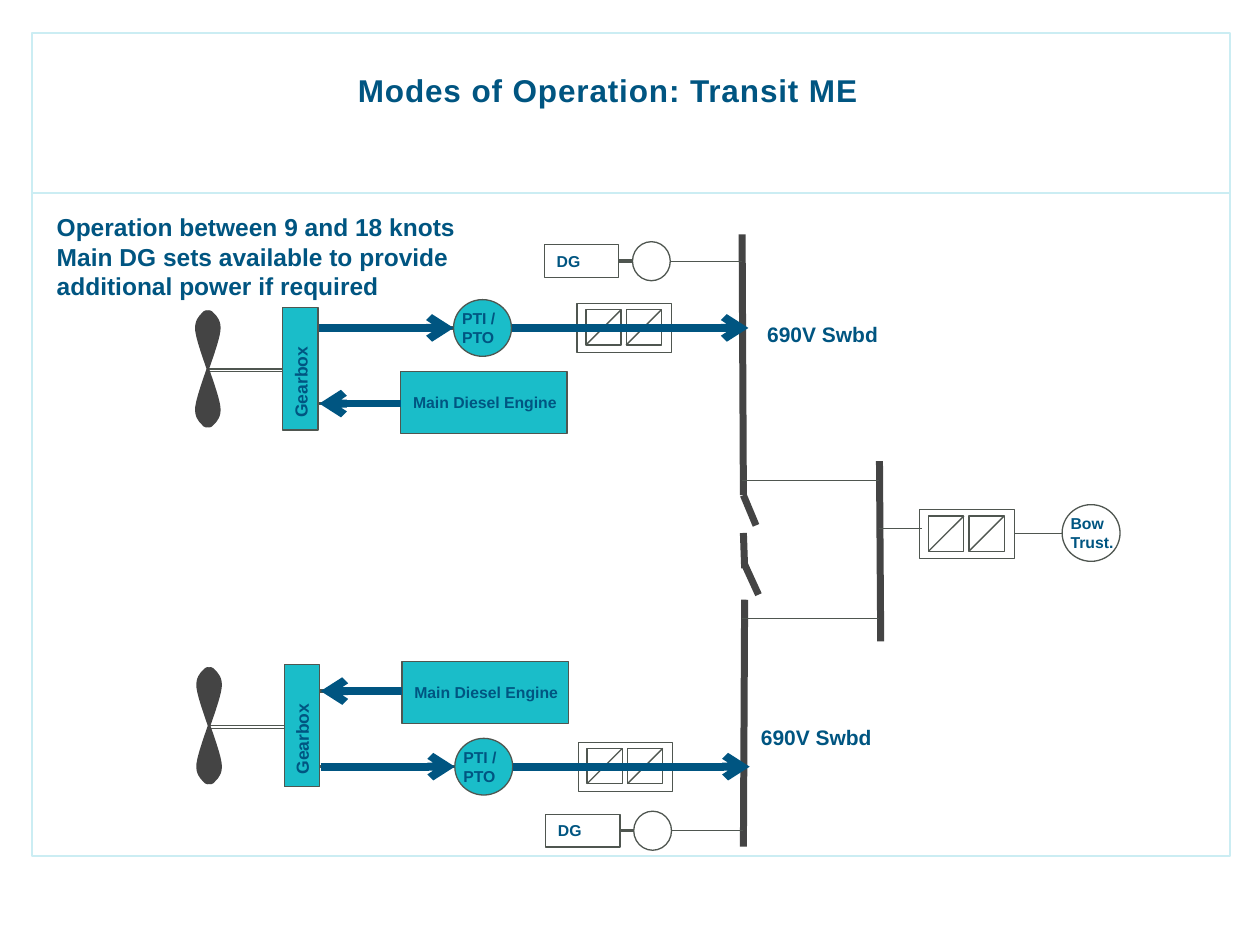
from itertools import product
from lxml.etree import SubElement
from pptx import Presentation
from pptx.dml.color import RGBColor
from pptx.enum.shapes import MSO_CONNECTOR, MSO_SHAPE
from pptx.enum.text import MSO_ANCHOR, MSO_AUTO_SIZE, PP_ALIGN
from pptx.oxml.ns import qn
from pptx.util import Inches, Pt

NAVY, TEAL, WHITE = "005581", "1ABDC9", "FFFFFF"
GREY, DARK, PALE = "4F5650", "444444", "CBEDF3"
RECT, OVAL = MSO_SHAPE.RECTANGLE, MSO_SHAPE.OVAL
BLADE = [
    (0.2, -4.6), (0, -4.7), (-0.3, -4.7), (-0.5, -4.4), (-0.7, -4.2),
    (-1.1, -3.8), (-1, -3), (-0.9, -2.2), (-0.2, -0.3), (0, 0.3),
    (0.2, 0.9), (0.1, 0.6), (0, 0.3),
]


def color(code):
    """Turn a hex string into a colour."""
    return RGBColor.from_string(code)


def cell(count):
    """Turn a count of grid cells (100 columns by 75 rows) into a length."""
    return Inches(count / 10)


def write(shape, text, size, align=PP_ALIGN.LEFT, anchor=MSO_ANCHOR.MIDDLE,
          wrap=False, pad=(0.1, 0.05), turn=None, track=None):
    """Fill a shape with bold text, one paragraph a line."""
    frame = shape.text_frame
    frame.auto_size = MSO_AUTO_SIZE.NONE
    frame.word_wrap = wrap
    frame.vertical_anchor = anchor
    frame.margin_left, frame.margin_right = Inches(pad[0]), Inches(0.1)
    frame.margin_top = frame.margin_bottom = Inches(pad[1])
    frame.text = text
    if turn:
        frame._txBody.bodyPr.set("vert", turn)
    for para in frame.paragraphs:
        para.alignment = align
        para.line_spacing = 1.0
        para.space_before = para.space_after = Pt(0)
        for run in para.runs:
            font = run.font
            font.name, font.size, font.bold = "Arial", Pt(size), True
            font.color.rgb = color(NAVY)
            if track:
                run._r.get_or_add_rPr().set("spc", str(track))


def block(slide, kind, x, y, wide, high, fill=None, edge=GREY, width=0.75):
    """Add a preset shape at a grid place."""
    shape = slide.shapes.add_shape(kind, *map(cell, (x, y, wide, high)))
    shape.shadow.inherit = False
    if fill:
        shape.fill.solid()
        shape.fill.fore_color.rgb = color(fill)
    else:
        shape.fill.background()
    shape.line.color.rgb = color(edge)
    shape.line.width = Pt(width)
    return shape


def wire(slide, x, y, to_x, to_y, tone=GREY, width=0.75, arrow=False):
    """Add a straight line, with an arrowhead at its end if asked."""
    line = slide.shapes.add_connector(
        MSO_CONNECTOR.STRAIGHT, *map(cell, (x, y, to_x, to_y)))
    line.line.color.rgb = color(tone)
    line.line.width = Pt(width)
    props = line._element.spPr
    if arrow:
        SubElement(props.find(qn("a:ln")), qn("a:tailEnd"), type="arrow")
    SubElement(props, qn("a:effectLst"))


def flow(slide, x, to_x, y):
    """Add a level power arrow."""
    wire(slide, x, y, to_x, y, NAVY, 4.5, True)


def label(slide, text, x, y):
    """Add a switchboard label."""
    box = slide.shapes.add_textbox(*map(cell, (x, y, 10.9, 3)))
    write(box, text, 12, anchor=MSO_ANCHOR.TOP)


def bend(shape):
    """Turn each three straight segments of an outline into a cubic curve."""
    steps = list(shape._element.iter(qn("a:lnTo")))
    path = steps[0].getparent()
    for start in range(0, len(steps), 3):
        arc = SubElement(path, qn("a:cubicBezTo"))
        for step in steps[start:start + 3]:
            arc.append(step[0])
            path.remove(step)


def screw(slide, x, y):
    """Draw a propeller of four half blades around its hub."""
    group = slide.shapes.add_group_shape()
    for down, side in product((1, -1), (1, -1)):
        dots = [(cell(x + side * a), cell(y + down * b)) for a, b in BLADE[:10]]
        build = group.shapes.build_freeform(*dots[0])
        build.add_line_segments(dots[1:], close=False)
        shape = build.convert_to_shape()
        bend(shape)
        shape.shadow.inherit = False
        shape.fill.solid()
        shape.fill.fore_color.rgb = color(DARK)
        shape.line.fill.background()


def drive(slide, x, y):
    """Draw a converter: two crossed squares in a frame."""
    for left in (x + 0.7, x + 3.9):
        block(slide, RECT, left, y + 0.5, 2.8, 2.8, WHITE)
        wire(slide, left + 2.8, y + 0.5, left, y + 3.3)
    block(slide, RECT, x, y, 7.5, 3.9)


def disc(slide, text, x, y, fill):
    """Draw a round machine with its name."""
    shape = block(slide, OVAL, x, y, 4.6, 4.5, fill)
    write(shape, text, 9, pad=(0, 0.05))


def genset(slide, x, y):
    """Draw a diesel generator wired to the bus."""
    write(block(slide, RECT, x, y, 5.9, 2.6, WHITE), "DG", 9)
    mid = y + 1.3
    block(slide, OVAL, x + 7, y - 0.25, 3, 3.1, WHITE)
    wire(slide, x + 7, mid, x + 5.9, mid, width=2)
    wire(slide, x + 10, mid, x + 15.7, mid)


def train(slide, x, y, side):
    """Draw a drive train around its shaft; side 1 puts the engine below."""
    main, power = y + side * 2.75, y - side * 3.25
    for gap in (0, 0.2):
        wire(slide, x + 5.9, y + gap, x, y + gap)
    screw(slide, x, y)
    wire(slide, x + 19.5, power, x + 8.1, power, width=2)
    wire(slide, x + 15.3, main, x + 8.6, main, width=2)
    gear = block(slide, RECT, x + 5.95, y - 4.85, 2.8, 9.7, TEAL)
    write(gear, "Gearbox", 10, turn="vert270")
    engine = block(slide, RECT, x + 15.3, y + side * 2.65 - 2.45, 13.2, 4.9, TEAL)
    write(engine, "Main Diesel Engine", 9)
    disc(slide, "PTI /\nPTO", x + 19.5, power - 2.25, TEAL)
    drive(slide, x + 29.3, power - 1.95)
    flow(slide, x + 24.1, x + 42.9, power)
    flow(slide, x + 8.85, x + 19.5, power)
    flow(slide, x + 15.3, x + 8.85, main)


def board(slide, x, y):
    """Draw the bus bars, bus ties and feeders."""
    bars = [
        (0, 0, 0.1, 20.7), (0.1, 20.7, 1.1, 23.1),
        (0.1, 23.7, 0.2, 26.5), (0.2, 26.2, 1.3, 28.6),
        (0.2, 29, 0.1, 48.6), (10.9, 18, 11, 32.3),
    ]
    for a, b, c, d in bars:
        wire(slide, x + a, y + b, x + c, y + d, DARK, 4)
    for drop in (19.55, 30.5):
        wire(slide, x, y + drop, x + 10.9, y + drop)


def bow(slide, x, y):
    """Draw the bow thruster with its converter."""
    drive(slide, x + 3.2, y)
    wire(slide, x, y + 1.5, x + 3.4, y + 1.5)
    wire(slide, x + 10.7, y + 1.9, x + 14.5, y + 1.9)
    disc(slide, "Bow\nTrust.", x + 14.5, y - 0.4, WHITE)


def header(slide):
    """Draw the page frame and fill the title and body."""
    block(slide, RECT, 2.54, 2.6, 95.06, 65.35, edge=PALE, width=1)
    wire(slide, 2.54, 15.3, 97.6, 15.3, PALE, 1)
    title, body = slide.placeholders
    spots = ((title, (0.4, 5.1, 95.7, 4)), (body, (3.5, 16.35, 39.7, 8.1)))
    for shape, spot in spots:
        shape.left, shape.top, shape.width, shape.height = map(cell, spot)
    write(title, "Modes of Operation: Transit ME", 18, PP_ALIGN.CENTER,
          MSO_ANCHOR.TOP, True, track=50)
    write(body, "Operation between 9 and 18 knots\nMain DG sets available to "
          "provide additional power if required", 14, anchor=MSO_ANCHOR.TOP, wrap=True)
    for para in body.text_frame.paragraphs:
        props = para._p.get_or_add_pPr()
        props.set("marL", "0")
        props.set("indent", "0")
        SubElement(props, qn("a:buNone"))


def main():
    """Build and save the slide."""
    deck = Presentation()
    deck.slide_width, deck.slide_height = cell(100), cell(75)
    slide = deck.slides.add_slide(deck.slide_layouts[1])
    header(slide)
    board(slide, 58.9, 18.6)
    bow(slide, 69.8, 40.45)
    for x, y, side, top in ((16.5, 29.28, 1, 19.43), (16.6, 57.6, -1, 64.63)):
        genset(slide, x + 26.7, top)
        train(slide, x, y, side)
    label(slide, "690V Swbd", 59.9, 25)
    label(slide, "690V Swbd", 59.4, 57)
    deck.save("out.pptx")


if __name__ == "__main__":
    main()
